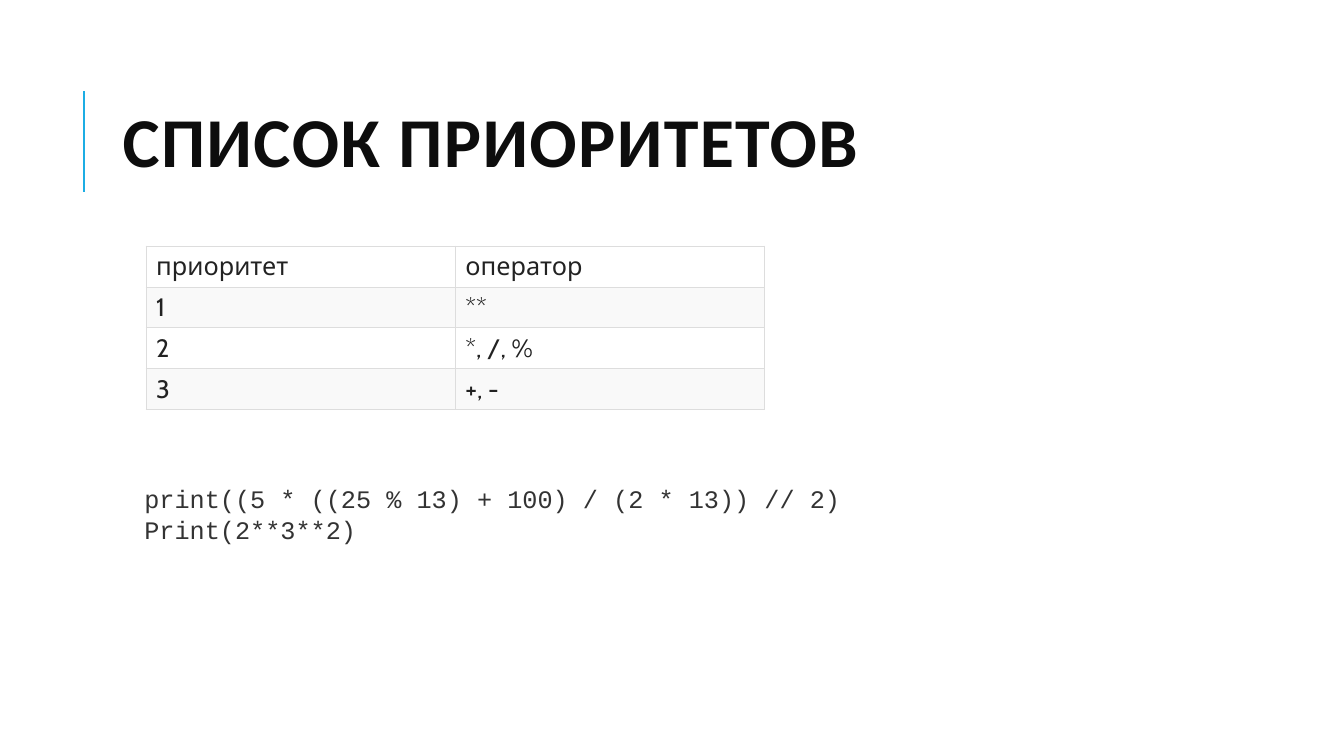
from dataclasses import dataclass

from lxml import etree
from pptx import Presentation
from pptx.dml.color import RGBColor
from pptx.enum.shapes import MSO_CONNECTOR
from pptx.enum.text import MSO_ANCHOR, MSO_AUTO_SIZE, PP_ALIGN
from pptx.oxml.ns import qn
from pptx.util import Inches, Pt

STRAIGHT = MSO_CONNECTOR.STRAIGHT
MIDDLE = MSO_ANCHOR.MIDDLE
NO_FIT = MSO_AUTO_SIZE.NONE
LEFT = PP_ALIGN.LEFT
TITLE_ONLY = 5
COLUMNS, ROWS = 16, 9


@dataclass(frozen=True)
class Theme:
    accent: str = "1CADE4"
    title: str = "0D0D0D"
    cell: str = "222222"
    code: str = "333333"
    border: str = "DDDDDD"
    bands: tuple = ("FFFFFF", "F9F9F9")
    title_font: str = "Calibri"
    cell_font: str = "Cabin"
    code_font: str = "Courier New"
    title_size: int = 50
    body_size: int = 18
    title_spacing: int = 100
    accent_width: float = 1.5
    border_width: float = 0.75


class SlideBuilder:
    def __init__(self, prs, theme):
        self.theme = theme
        self.column = prs.slide_width / COLUMNS
        self.row = prs.slide_height / ROWS
        self.s = prs.slides.add_slide(prs.slide_layouts[TITLE_ONLY])

    def box(self, x, y, w, h):
        return (round(x * self.column), round(y * self.row),
                round(w * self.column), round(h * self.row))

    def style(self, p, font, size, color, bold=False):
        p.alignment = LEFT
        p.font.name = font
        p.font.size = Pt(size)
        p.font.bold = bold
        p.font.color.rgb = RGBColor.from_string(color)

    def title(self, text, *place):
        t = self.theme
        sp = self.s.shapes.title
        sp.left, sp.top, sp.width, sp.height = self.box(*place)
        tf = sp.text_frame
        tf.text = text
        tf.word_wrap = True
        tf.auto_size = NO_FIT
        tf.vertical_anchor = MIDDLE
        p = tf.paragraphs[0]
        p.line_spacing = 0.8
        self.style(p, t.title_font, t.title_size, t.title, bold=True)
        p.runs[0].font._element.set("spc", str(t.title_spacing))

    def rule(self, x, top, bottom):
        left, start, _, height = self.box(x, top, 0, bottom - top)
        line = self.s.shapes.add_connector(STRAIGHT, left, start + height, left, start)
        line.line.color.rgb = RGBColor.from_string(self.theme.accent)
        line.line.width = Pt(self.theme.accent_width)
        etree.SubElement(line._element.spPr, qn("a:effectLst"))

    def borders(self, cell):
        tc_pr = cell._tc.get_or_add_tcPr()
        for side in ("lnL", "lnR", "lnT", "lnB"):
            ln = etree.SubElement(tc_pr, qn(f"a:{side}"), w=str(Pt(self.theme.border_width)))
            fill = etree.SubElement(ln, qn("a:solidFill"))
            etree.SubElement(fill, qn("a:srgbClr"), val=self.theme.border)

    def table(self, rows, *place):
        t = self.theme
        table = self.s.shapes.add_table(len(rows), len(rows[0]), *self.box(*place)).table
        table.first_row = table.horz_banding = False
        for i, values in enumerate(rows):
            for j, value in enumerate(values):
                cell = table.cell(i, j)
                cell.text = value
                cell.vertical_anchor = MIDDLE
                self.style(cell.text_frame.paragraphs[0], t.cell_font, t.body_size, t.cell)
                self.borders(cell)
                cell.fill.solid()
                cell.fill.fore_color.rgb = RGBColor.from_string(t.bands[i % 2])

    def code(self, lines, *place):
        t = self.theme
        tf = self.s.shapes.add_textbox(*self.box(*place)).text_frame
        tf.word_wrap = True
        tf.text = "\n".join(lines)
        for p in tf.paragraphs:
            self.style(p, t.code_font, t.body_size, t.code)


def main():
    prs = Presentation()
    prs.slide_width, prs.slide_height = Inches(13.33), Inches(7.5)
    slide = SlideBuilder(prs, Theme())
    slide.rule(1, 1.08, 2.28)
    slide.title("СПИСОК ПРИОРИТЕТОВ", 1.34, 0.77, 12.76, 1.97)
    slide.table([
        ("приоритет", "оператор"),
        ("1", "**"),
        ("2", "*, /, %"),
        ("3", "+, -"),
    ], 1.74, 2.93, 7.36, 1.92)
    slide.code([
        "print((5 * ((25 % 13) + 100) / (2 * 13)) // 2)",
        "Print(2**3**2)",
    ], 1.6, 5.7, 10.69, 0.85)
    prs.save("out.pptx")


if __name__ == "__main__":
    main()
